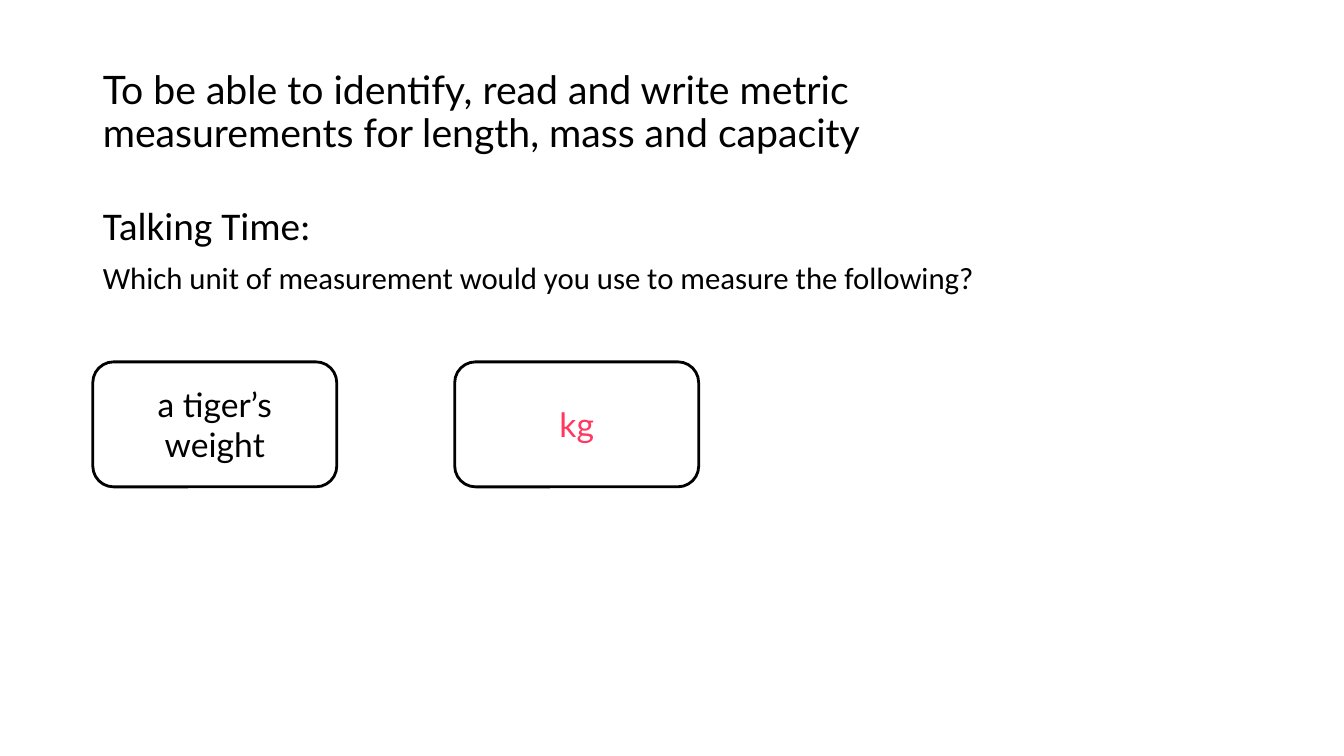
from lxml.etree import SubElement
from pptx import Presentation
from pptx.dml.color import RGBColor
from pptx.enum.shapes import MSO_SHAPE
from pptx.enum.text import MSO_ANCHOR, MSO_AUTO_SIZE, PP_ALIGN
from pptx.oxml.ns import qn
from pptx.util import Inches, Pt

COLOURS = {"paper": "FFFFFF", "ink": "000000", "answer": "FF3860"}
LEFT = 0.92
CARD_TOP, CARD_WIDTH, CARD_HEIGHT, CARD_STEP = 3.59, 2.42, 1.24, 3.59


def colour(name):
    return RGBColor.from_string(COLOURS[name])


def place(shape, left, top, width, height):
    shape.left, shape.top = Inches(left), Inches(top)
    shape.width, shape.height = Inches(width), Inches(height)


def style(paragraph, font, size, ink="ink", align=PP_ALIGN.LEFT, spacing=0.9):
    paragraph.alignment = align
    paragraph.line_spacing = spacing
    paragraph.font.name = font
    paragraph.font.size = Pt(size)
    paragraph.font.color.rgb = colour(ink)


def remove_bullet(paragraph):
    properties = paragraph._p.get_or_add_pPr()
    properties.set("marL", "0")
    properties.set("indent", "0")
    SubElement(properties, qn("a:buNone"))


def fill_title(title, objective):
    place(title, LEFT, 0.4, 9.6, 1.45)
    frame = title.text_frame
    frame.text = objective
    frame.auto_size = MSO_AUTO_SIZE.NONE
    frame.vertical_anchor = MSO_ANCHOR.MIDDLE
    style(frame.paragraphs[0], "Lato", 28)


def fill_body(body, lines):
    """Write (text, size) lines as unbulleted paragraphs."""
    place(body, LEFT, 2, 11.5, 4.76)
    frame = body.text_frame
    frame.text = "\n".join(text for text, _ in lines)
    frame.auto_size = MSO_AUTO_SIZE.NONE
    for index, (paragraph, (_, size)) in enumerate(zip(frame.paragraphs, lines)):
        remove_bullet(paragraph)
        paragraph.space_before = Pt(10 if index else 0)
        style(paragraph, "Calibri", size)


def add_card(slide, column, text, ink):
    card = slide.shapes.add_shape(
        MSO_SHAPE.ROUNDED_RECTANGLE, Inches(LEFT + column * CARD_STEP),
        Inches(CARD_TOP), Inches(CARD_WIDTH), Inches(CARD_HEIGHT))
    card.shadow.inherit = False
    card.fill.solid()
    card.fill.fore_color.rgb = colour("paper")
    card.line.color.rgb = colour("ink")
    card.line.width = Pt(2)
    frame = card.text_frame
    frame.text = text
    frame.word_wrap = True
    frame.vertical_anchor = MSO_ANCHOR.MIDDLE
    style(frame.paragraphs[0], "Lato", 24, ink, PP_ALIGN.CENTER, 1.0)


def main():
    deck = Presentation()
    deck.slide_width, deck.slide_height = Inches(13.33), Inches(7.5)
    slide = deck.slides.add_slide(deck.slide_layouts[1])
    fill_title(slide.shapes.title,
               "To be able to identify, read and write metric "
               "measurements for length, mass and capacity")
    fill_body(slide.placeholders[1], [
        ("Talking Time:", 28),
        ("Which unit of measurement would you use to measure the following?", 22),
    ])
    cards = [("a tiger’s weight", "ink"), ("kg", "answer")]
    for column, (text, ink) in enumerate(cards):
        add_card(slide, column, text, ink)
    deck.save("out.pptx")


if __name__ == "__main__":
    main()
